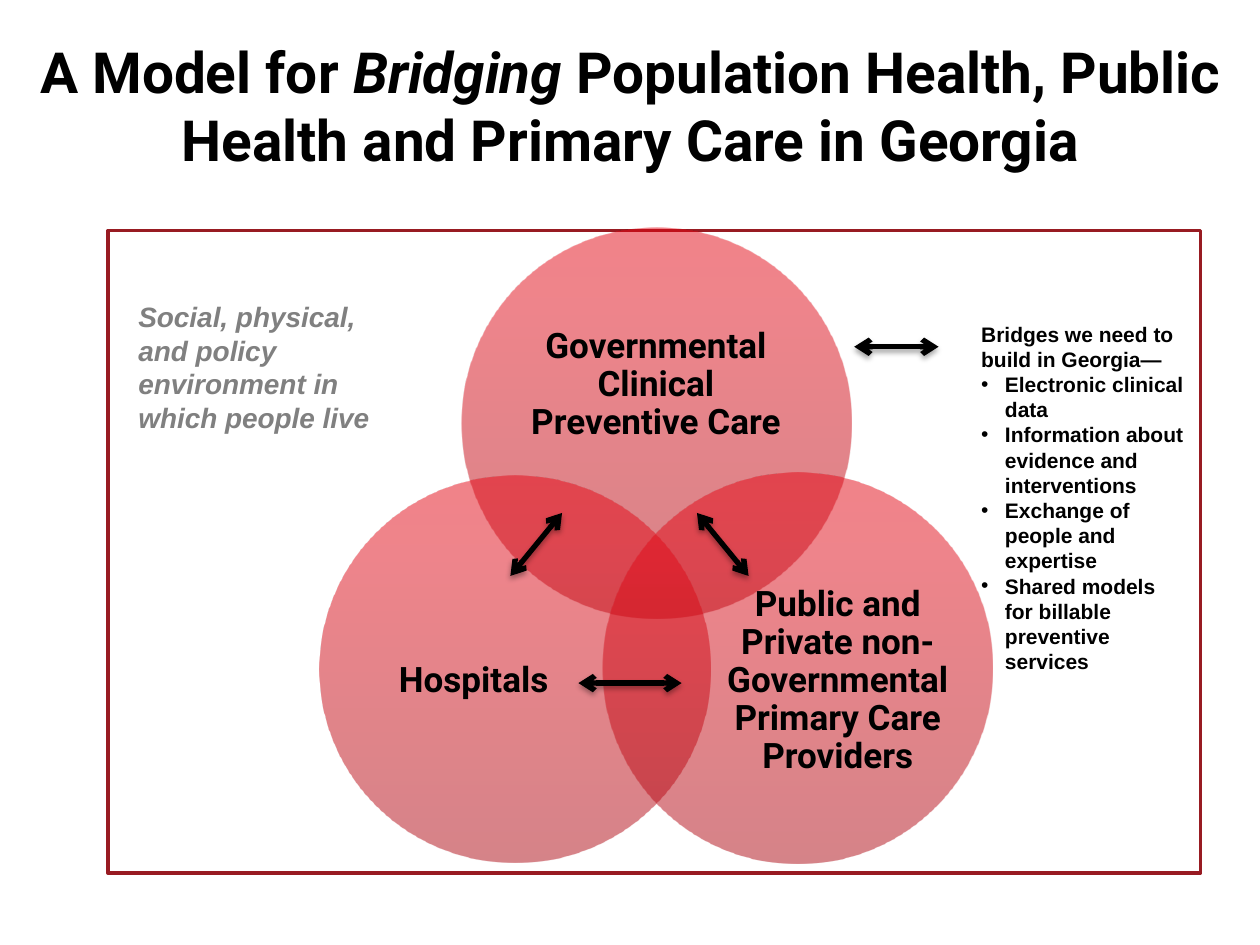
from pptx import Presentation
from pptx import util as u
from pptx.dml import color
from pptx.enum import shapes, text
from pptx.oxml import parse_xml
from pptx.oxml.ns import nsdecls

COLORS = {
    "frame": "981B22", "white": "FFFFFF", "black": "000000", "gray": "808080",
    "dark": "AD0812", "mid": "E00A17", "bright": "E50613",
}


def rgb(name):
    return color.RGBColor.from_string(COLORS[name])


def add_text(box, paragraphs, font, size, tint="black", align=None, anchor=None, margin=None):
    area = slide.shapes.add_textbox(*map(u.Cm, box))
    frame = area.text_frame
    frame.word_wrap = True
    frame.text = "\n".join(paragraphs)
    if anchor is not None:
        frame.vertical_anchor = anchor
    if margin is not None:
        frame.margin_left = frame.margin_right = margin
        frame.margin_top = frame.margin_bottom = margin
    for paragraph in frame.paragraphs:
        paragraph.alignment = align
        for run in paragraph.runs:
            run.font.name = font
            run.font.size = u.Pt(size)
            run.font.bold = True
            run.font.color.rgb = rgb(tint)
    return frame


prs = Presentation()
prs.slide_width, prs.slide_height = u.Cm(25.4), u.Cm(19.05)
slide = prs.slides.add_slide(prs.slide_layouts[6])
center, middle = text.PP_ALIGN.CENTER, text.MSO_ANCHOR.MIDDLE

environment = slide.shapes.add_shape(
    shapes.MSO_SHAPE.RECTANGLE, u.Cm(2.18), u.Cm(4.65), u.Cm(22.02), u.Cm(12.95))
environment.shadow.inherit = False
environment.fill.solid()
environment.fill.fore_color.rgb = rgb("white")
environment.line.color.rgb = rgb("frame")
environment.line.width = u.Pt(2)

title_parts = ["A Model for ", "Bridging",
               " Population Health, Public Health and Primary Care in Georgia"]
title = add_text((0.43, 0.74, 24.56, 2.74), title_parts[:1], "Roboto", 32.4,
                 align=center, anchor=middle).paragraphs[0]
for part in title_parts[1:]:
    run = title.add_run()
    run.text = part
    run.font.name = "Roboto"
    run.font.size = u.Pt(32.4)
    run.font.bold = True
    run.font.italic = part == "Bridging"
    run.font.color.rgb = rgb("black")

stops = "".join(
    f'<a:gs pos="{position}"><a:srgbClr val="{COLORS[name]}"><a:alpha val="50000"/></a:srgbClr></a:gs>'
    for position, name in [(0, "dark"), (80000, "mid"), (100000, "bright")])
sectors = [
    ("Governmental Clinical Preventive Care", (9.3, 4.6, 7.87, 7.87), (10.34, 5.99, 5.77, 3.56)),
    ("Public and Private non-Governmental Primary Care Providers",
     (12.14, 9.53, 7.87, 7.87), (14.53, 11.56, 4.72, 4.34)),
    ("Hospitals", (6.45, 9.58, 7.87, 7.8), (7.19, 11.58, 4.72, 4.29)),
]
for name, circle_box, label_box in sectors:
    circle = slide.shapes.add_shape(shapes.MSO_SHAPE.OVAL, *map(u.Cm, circle_box))
    circle.shadow.inherit = False
    circle.line.fill.background()
    circle._element.spPr.insert(2, parse_xml(
        f'<a:gradFill {nsdecls("a")} rotWithShape="1"><a:gsLst>{stops}</a:gsLst>'
        '<a:lin ang="16200000" scaled="0"/></a:gradFill>'))
    label = add_text(label_box, [name], "Roboto", 20, align=center, anchor=middle, margin=0)
    label.paragraphs[0].line_spacing = 0.9

bridges = [
    (14.05, 10.34, 15.09, 11.61),
    (11.66, 13.77, 13.74, 13.77),
    (11.33, 10.34, 10.29, 11.61),
    (18.92, 6.99, 17.22, 6.99),
]
for ends in bridges:
    bridge = slide.shapes.add_connector(shapes.MSO_CONNECTOR.STRAIGHT, *map(u.Cm, ends))
    bridge.line.color.rgb = rgb("black")
    bridge.line.width = u.Pt(3)
    for end in ("headEnd", "tailEnd"):
        bridge.line._get_or_add_ln().append(
            parse_xml(f'<a:{end} {nsdecls("a")} type="arrow"/>'))
    bridge._element.spPr.append(parse_xml(
        f'<a:effectLst {nsdecls("a")}><a:outerShdw blurRad="39370" dist="22860" dir="5400000" '
        f'rotWithShape="0"><a:srgbClr val="{COLORS["black"]}"><a:alpha val="35000"/>'
        '</a:srgbClr></a:outerShdw></a:effectLst>'))

needs = add_text((19.53, 6.35, 4.67, 7.44), [
    "Bridges we need to build in Georgia—",
    "Electronic clinical data",
    "Information about evidence and interventions",
    "Exchange of people and expertise",
    "Shared models for billable preventive services",
], "Arial", 12)
for need in needs.paragraphs[1:]:
    properties = need._p.get_or_add_pPr()
    properties.set("marL", str(u.Cm(0.48)))
    properties.set("indent", str(-u.Cm(0.48)))
    properties.append(parse_xml(f'<a:buFont {nsdecls("a")} typeface="Arial"/>'))
    properties.append(parse_xml(f'<a:buChar {nsdecls("a")} char="•"/>'))

setting = add_text((2.54, 5.92, 5.28, 3), [
    "Social, physical, and policy environment in which people live"], "Arial", 16, "gray")
setting.paragraphs[0].runs[0].font.italic = True

prs.save("out.pptx")
